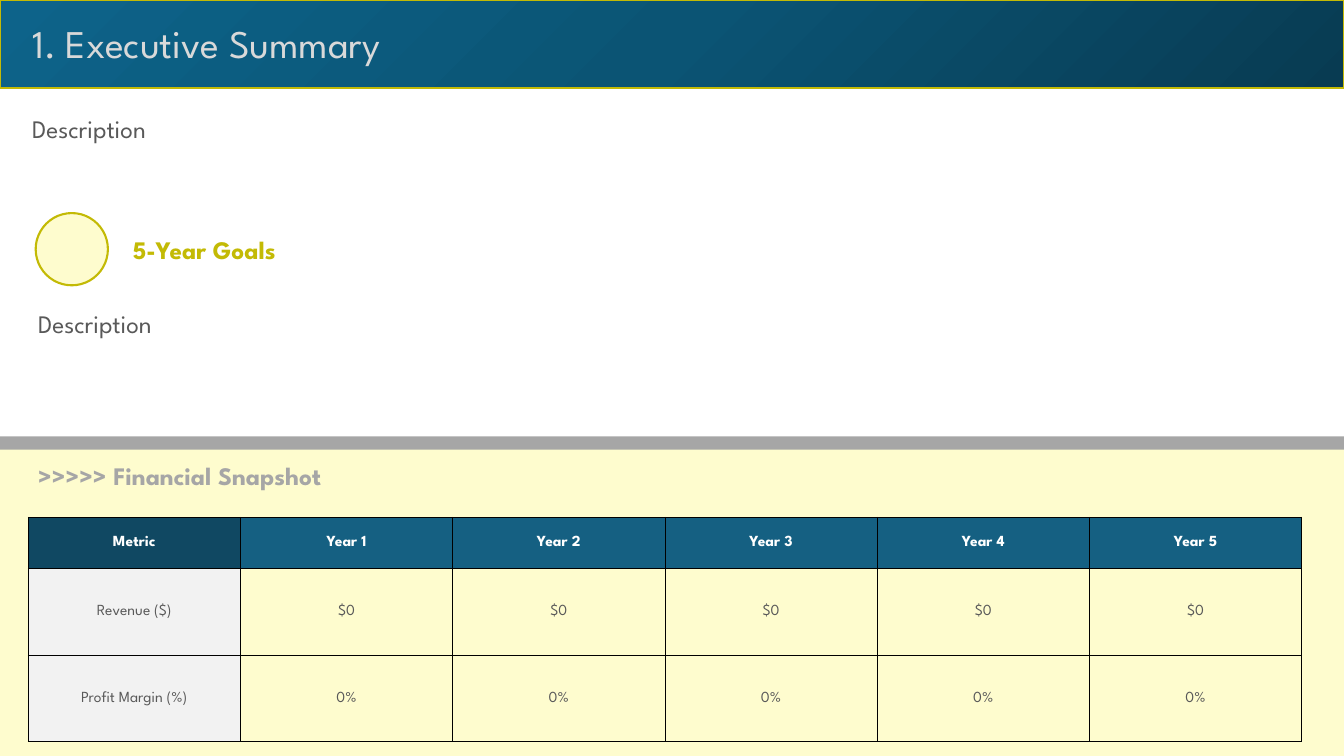
import copy

import pptx
import pptx.dml.color
import pptx.enum.shapes
import pptx.enum.text
import pptx.oxml
import pptx.oxml.ns
import pptx.util

Cm = pptx.util.Cm
Pt = pptx.util.Pt
SHAPE = pptx.enum.shapes.MSO_SHAPE
ANCHOR = pptx.enum.text.MSO_ANCHOR
ALIGN = pptx.enum.text.PP_ALIGN
qn = pptx.oxml.ns.qn

FONT = "League Spartan"
OLIVE, CREAM, GREY, DARK_GREY = "C3BA05", "FEFCCE", "A6A6A6", "595959"
WHITE, LIGHT_GREY, PALE_GREY = "FFFFFF", "D9D9D9", "F2F2F2"
DEEP_TEAL, TEAL = "104862", "156082"
HEADER_GRADIENT = [(0, "083B52"), (0.5, "0B5474"), (1, "0D638A")]

SLIDE_WIDTH, SLIDE_HEIGHT = 33.87, 19.05
TITLE = "1. Executive Summary"
# text, left, top, width, colour, bold
TEXTS = [
    ("Description", 0.56, 2.74, 32.46, DARK_GREY, False),
    ("5-Year Goals", 3.1, 5.77, 17.65, OLIVE, True),
    ("Description", 0.71, 7.65, 32.46, DARK_GREY, False),
    (">>>>> Financial Snapshot", 0.71, 11.48, 17.65, GREY, True),
]
YEARS = 5
SNAPSHOT = [
    ["Metric"] + [f"Year {year}" for year in range(1, YEARS + 1)],
    ["Revenue ($)"] + ["$0"] * YEARS,
    ["Profit Margin (%)"] + ["0%"] * YEARS,
]
COLUMN_WIDTH = 5.35
ROW_HEIGHTS = [1.3, 2.18, 2.18]


def rgb(value):
    return pptx.dml.color.RGBColor.from_string(value)


def write(frame, text, size, color, bold=False, align=ALIGN.LEFT):
    frame.text = text
    para = frame.paragraphs[0]
    para.alignment = align
    for span in para.runs:
        span.font.name = FONT
        span.font.size = Pt(size)
        span.font.bold = bold
        span.font.color.rgb = rgb(color)


def add_block(page, kind, left, top, width, height, fill=None, line=None):
    block = page.shapes.add_shape(kind, Cm(left), Cm(top), Cm(width), Cm(height))
    block.shadow.inherit = False
    if fill:
        block.fill.solid()
        block.fill.fore_color.rgb = rgb(fill)
    if line:
        block.line.color.rgb = rgb(line)
        block.line.width = Pt(1.5)
    else:
        block.line.fill.background()
    return block


def apply_gradient(block, stops, angle):
    block.fill.gradient()
    block.fill.gradient_angle = angle
    stop_list = block.element.find(".//" + qn("a:gsLst"))
    while len(stop_list) < len(stops):
        stop_list.append(copy.deepcopy(stop_list[0]))
    for stop, (position, color) in zip(block.fill.gradient_stops, stops):
        stop.position = position
        stop.color.rgb = rgb(color)


def add_borders(cell):
    properties = cell._tc.get_or_add_tcPr()
    for index, side in enumerate(("lnL", "lnR", "lnT", "lnB")):
        properties.insert(index, pptx.oxml.parse_xml(
            f'<a:{side} {pptx.oxml.ns.nsdecls("a")} w="6350"><a:solidFill>'
            f'<a:srgbClr val="000000"/></a:solidFill></a:{side}>'))


def add_title(page):
    title = page.shapes.title
    title.left, title.top, title.width, title.height = Cm(0.56), Cm(0.36), Cm(20.52), Cm(1.45)
    title.text_frame.vertical_anchor = ANCHOR.MIDDLE
    write(title.text_frame, TITLE, 28, LIGHT_GREY)
    return title


def add_snapshot(page):
    table = page.shapes.add_table(
        len(SNAPSHOT), YEARS + 1, Cm(0.71), Cm(13.03),
        Cm(COLUMN_WIDTH * (YEARS + 1)), Cm(sum(ROW_HEIGHTS))).table
    for column in table.columns:
        column.width = Cm(COLUMN_WIDTH)
    for row, (values, height) in enumerate(zip(SNAPSHOT, ROW_HEIGHTS)):
        table.rows[row].height = Cm(height)
        for column, value in enumerate(values):
            cell = table.cell(row, column)
            heading, label = row == 0, column == 0
            cell.vertical_anchor = ANCHOR.MIDDLE
            cell.margin_left = cell.margin_right = Cm(0.18)
            write(cell.text_frame, value, 11, WHITE if heading else DARK_GREY,
                  heading, ALIGN.CENTER)
            if heading or label:
                cell.fill.solid()
                label_fill = DEEP_TEAL if heading else PALE_GREY
                cell.fill.fore_color.rgb = rgb(label_fill if label else TEAL)
            else:
                cell.fill.background()
            add_borders(cell)


def main():
    deck = pptx.Presentation()
    deck.slide_width, deck.slide_height = Cm(SLIDE_WIDTH), Cm(SLIDE_HEIGHT)
    page = deck.slides.add_slide(deck.slide_layouts[5])

    add_block(page, SHAPE.RECTANGLE, 0, 11.05, SLIDE_WIDTH, 8, CREAM)
    header = add_block(page, SHAPE.RECTANGLE, 0, 0, SLIDE_WIDTH, 2.22, line=OLIVE)
    apply_gradient(header, HEADER_GRADIENT, 135)
    # The title placeholder has to sit in front of the header band.
    header.element.addnext(add_title(page).element)
    add_block(page, SHAPE.OVAL, 0.9, 5.37, 1.82, 1.82, CREAM, OLIVE)

    for text, left, top, width, color, bold in TEXTS:
        box = page.shapes.add_textbox(Cm(left), Cm(top), Cm(width), Cm(1.02))
        box.text_frame.word_wrap = True
        write(box.text_frame, text, 18, color, bold)

    add_snapshot(page)
    add_block(page, SHAPE.RECTANGLE, 0, 11, SLIDE_WIDTH, 0.33, GREY)
    deck.save("out.pptx")


if __name__ == "__main__":
    main()
